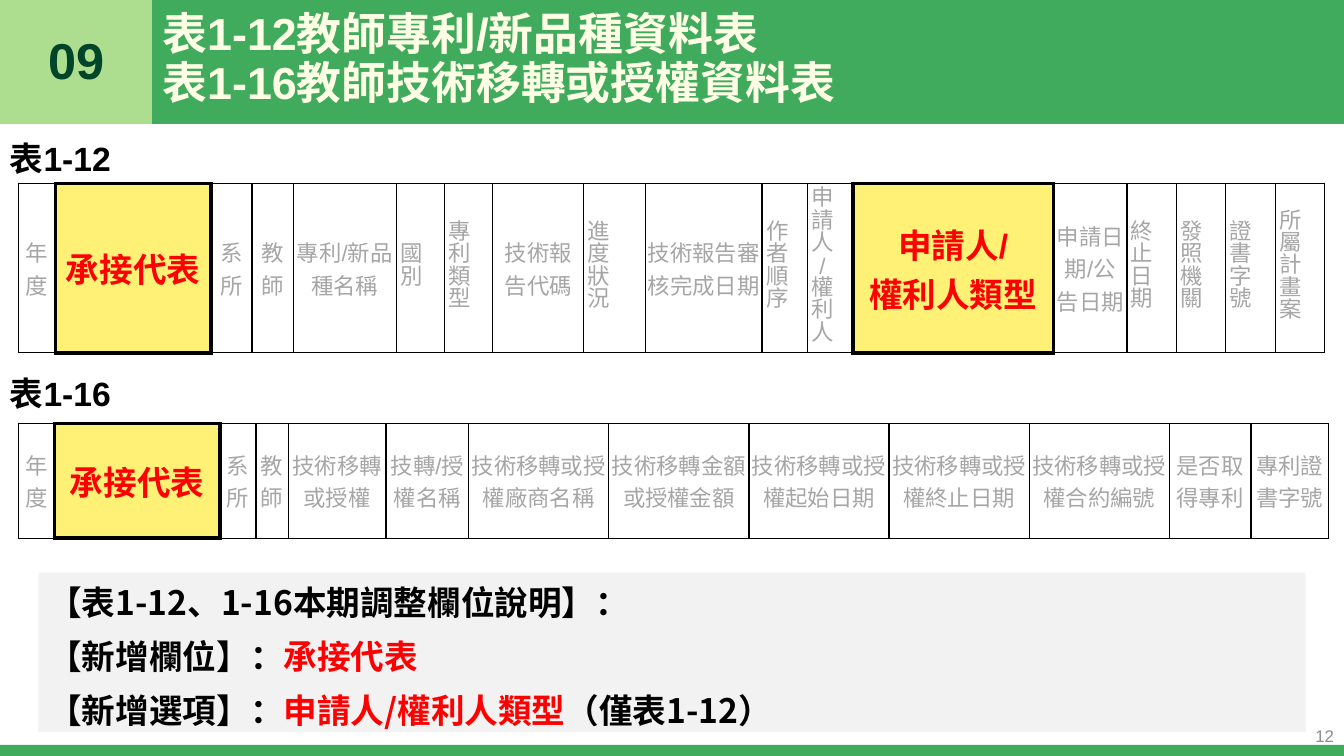
from dataclasses import dataclass

from lxml import etree
from pptx import Presentation
from pptx import util as u
from pptx.dml.color import RGBColor
from pptx.enum import shapes, text
from pptx.oxml.ns import qn

PX = 9144  # 100 px to the inch


@dataclass(frozen=True)
class Theme:
    green: str = "41AB5D"
    light_green: str = "ADDD8E"
    dark_green: str = "004529"
    cream: str = "FFFFE5"
    white: str = "FFFFFF"
    panel: str = "F2F2F2"
    yellow: str = "FFF176"
    black: str = "000000"
    red: str = "FF0000"
    muted: str = "A6A6A6"
    page: str = "8C8C8C"
    latin: str = "Arial"
    cjk: str = "Noto Sans CJK SC"
    number_size: int = 36
    title_size: int = 32
    strong_size: int = 24
    cell_size: int = 16
    page_size: int = 12


THEME = Theme()

# Column entries: (width, heading, kind)
PLAIN, VERTICAL, NEW = "plain", "vertical", "new"
PATENT_COLUMNS = [
    (37, "年度", PLAIN), (154, "承接代表", NEW), (41, "系所", PLAIN),
    (41, "教師", PLAIN), (102, "專利/新品種名稱", PLAIN), (48, "國別", VERTICAL),
    (48, "專利類型", VERTICAL), (90, "技術報告代碼", PLAIN),
    (61, "進度狀況", VERTICAL), (116, "技術報告審核完成日期", PLAIN),
    (45, "作者順序", VERTICAL), (45, "申請人/權利人", VERTICAL),
    (199, "申請人/\v權利人類型", NEW), (73, "申請日期/公告日期", PLAIN),
    (49, "終止日期", VERTICAL), (49, "發照機關", VERTICAL),
    (49, "證書字號", VERTICAL), (49, "所屬計畫案", VERTICAL),
]
TRANSFER_COLUMNS = [
    (36, "年度", PLAIN), (164, "承接代表", NEW), (36, "系所", PLAIN),
    (32, "教師", PLAIN), (97, "技術移轉或授權", PLAIN), (82, "技轉/授權名稱", PLAIN),
    (139, "技術移轉或授權廠商名稱", PLAIN), (139, "技術移轉金額或授權金額", PLAIN),
    (139, "技術移轉或授權起始日期", PLAIN), (139, "技術移轉或授權終止日期", PLAIN),
    (139, "技術移轉或授權合約編號", PLAIN), (81, "是否取得專利", PLAIN),
    (77, "專利證書字號", PLAIN),
]
NOTES = [
    [("【表1-12、1-16本期調整欄位說明】：", THEME.black)],
    [("【新增欄位】：", THEME.black), ("承接代表", THEME.red)],
    [("【新增選項】：", THEME.black), ("申請人/權利人類型", THEME.red),
     ("（僅表1-12）", THEME.black)],
]


def format_run(run, size, color, bold=False, latin=THEME.latin):
    font = run.font
    font.size, font.bold, font.name = u.Pt(size), bold, latin
    font.color.rgb = RGBColor.from_string(color)
    east_asian = etree.Element(qn("a:ea"), typeface=THEME.cjk)
    run._r.rPr.find(qn("a:latin")).addnext(east_asian)


def format_frame(frame, size, color, bold=False, align=text.PP_ALIGN.LEFT):
    for paragraph in frame.paragraphs:
        paragraph.alignment = align
        for run in paragraph.runs:
            format_run(run, size, color, bold)


def place(shape, box):
    shape.left, shape.top, shape.width, shape.height = (n * PX for n in box)


def add_band(slide, box, color):
    band = slide.shapes.add_shape(
        shapes.MSO_SHAPE.RECTANGLE, *(n * PX for n in box))
    band.shadow.inherit = False
    band.fill.solid()
    band.fill.fore_color.rgb = RGBColor.from_string(color)
    band.line.fill.background()


def add_label(slide, box, words, size, color, bold=True,
              align=text.PP_ALIGN.LEFT, anchor=text.MSO_ANCHOR.TOP):
    label = slide.shapes.add_textbox(*(n * PX for n in box))
    frame = label.text_frame
    frame.word_wrap = True
    frame.vertical_anchor = anchor
    frame.text = words
    format_frame(frame, size, color, bold, align)


def add_header(slide, box, number, title_lines):
    left, top, width, height = box
    number_width = 151
    title_left, title_width = left + number_width, width - number_width
    add_band(slide, (left, top, number_width, height), THEME.light_green)
    add_band(slide, (title_left, top, title_width, height), THEME.green)
    add_label(slide, (left, top, number_width, height - 5), number,
              THEME.number_size, THEME.dark_green,
              align=text.PP_ALIGN.CENTER, anchor=text.MSO_ANCHOR.MIDDLE)

    title = slide.shapes.title
    place(title, (title_left, top, title_width, height - 3))
    title.element.getparent().append(title.element)  # in front of the band
    frame = title.text_frame
    frame.text = "\n".join(title_lines)
    frame.auto_size = text.MSO_AUTO_SIZE.NONE
    frame.vertical_anchor = text.MSO_ANCHOR.MIDDLE
    format_frame(frame, THEME.title_size, THEME.cream, bold=True)
    for paragraph in frame.paragraphs:
        paragraph.line_spacing = 0.9
        paragraph.space_before = u.Pt(0)


def set_border(cell, side, points):
    line = etree.SubElement(cell._tc.get_or_add_tcPr(), qn("a:" + side),
                            w=str(u.Pt(points)))
    fill = etree.SubElement(line, qn("a:solidFill"))
    etree.SubElement(fill, qn("a:srgbClr"), val=THEME.black)


def stack_vertically(cell, column_width):
    """Keep the heading in one column of characters at the left."""
    cell._tc.tcPr.set("vert", "eaVert")
    cell.margin_right = (column_width - 28) * PX
    cell.text_frame.paragraphs[0].line_spacing = u.Pt(THEME.cell_size)


def add_field_table(slide, box, caption, caption_top, columns):
    height = box[3]
    add_label(slide, (0, caption_top, 134, 50), caption,
              THEME.strong_size, THEME.black)
    table = slide.shapes.add_table(
        1, len(columns), *(n * PX for n in box)).table
    table.first_row = table.horz_banding = False
    table.rows[0].height = height * PX

    new = [False] + [kind == NEW for _, _, kind in columns] + [False]
    for index, (column_width, heading, kind) in enumerate(columns):
        table.columns[index].width = column_width * PX
        cell = table.cell(0, index)
        before, here, after = new[index:index + 3]
        thick = {"lnL": before or here, "lnR": here or after,
                 "lnT": here, "lnB": here}
        for side, is_thick in thick.items():
            set_border(cell, side, 3 if is_thick else 1)
        cell.fill.solid()
        cell.fill.fore_color.rgb = RGBColor.from_string(
            THEME.yellow if here else THEME.white)
        cell.margin_left = cell.margin_right = 2 * PX
        cell.margin_top = cell.margin_bottom = 0
        cell.vertical_anchor = text.MSO_ANCHOR.MIDDLE
        cell.text_frame.text = heading
        format_frame(cell.text_frame,
                     THEME.strong_size if here else THEME.cell_size,
                     THEME.red if here else THEME.muted,
                     bold=here, align=text.PP_ALIGN.CENTER)
        if kind == VERTICAL:
            stack_vertically(cell, column_width)


def add_notes_panel(slide, box, lines):
    panel = slide.placeholders[1]
    place(panel, box)
    panel.fill.solid()
    panel.fill.fore_color.rgb = RGBColor.from_string(THEME.panel)
    frame = panel.text_frame
    frame.auto_size = text.MSO_AUTO_SIZE.NONE
    frame.vertical_anchor = text.MSO_ANCHOR.TOP
    for index, parts in enumerate(lines):
        paragraph = frame.add_paragraph() if index else frame.paragraphs[0]
        properties = paragraph._p.get_or_add_pPr()
        properties.set("marL", "0")
        properties.set("indent", "0")
        etree.SubElement(properties, qn("a:buNone"))
        paragraph.line_spacing = 1.1
        paragraph.space_before = u.Pt(7 if index else 0)
        for words, color in parts:
            run = paragraph.add_run()
            run.text = words
            format_run(run, THEME.strong_size, color, True, THEME.cjk)


def add_footer(slide, box, page):
    left, top, width, height = box
    add_band(slide, box, THEME.green)
    add_label(slide, (left + width - 300, top - 29, 300, 40), page,
              THEME.page_size, THEME.page, bold=False,
              align=text.PP_ALIGN.RIGHT, anchor=text.MSO_ANCHOR.MIDDLE)


def main():
    presentation = Presentation()
    presentation.slide_width, presentation.slide_height = 1333 * PX, 750 * PX
    slide = presentation.slides.add_slide(presentation.slide_layouts[1])
    add_footer(slide, (0, 739, 1333, 11), "12")
    add_header(slide, (0, 0, 1333, 123), "09",
               ["表1-12教師專利/新品種資料表", "表1-16教師技術移轉或授權資料表"])
    add_field_table(slide, (18, 182, 1297, 168), "表1-12", 132, PATENT_COLUMNS)
    add_field_table(slide, (18, 420, 1300, 114), "表1-16", 365, TRANSFER_COLUMNS)
    add_notes_panel(slide, (38, 568, 1257, 158), NOTES)
    presentation.save("out.pptx")


if __name__ == "__main__":
    main()
